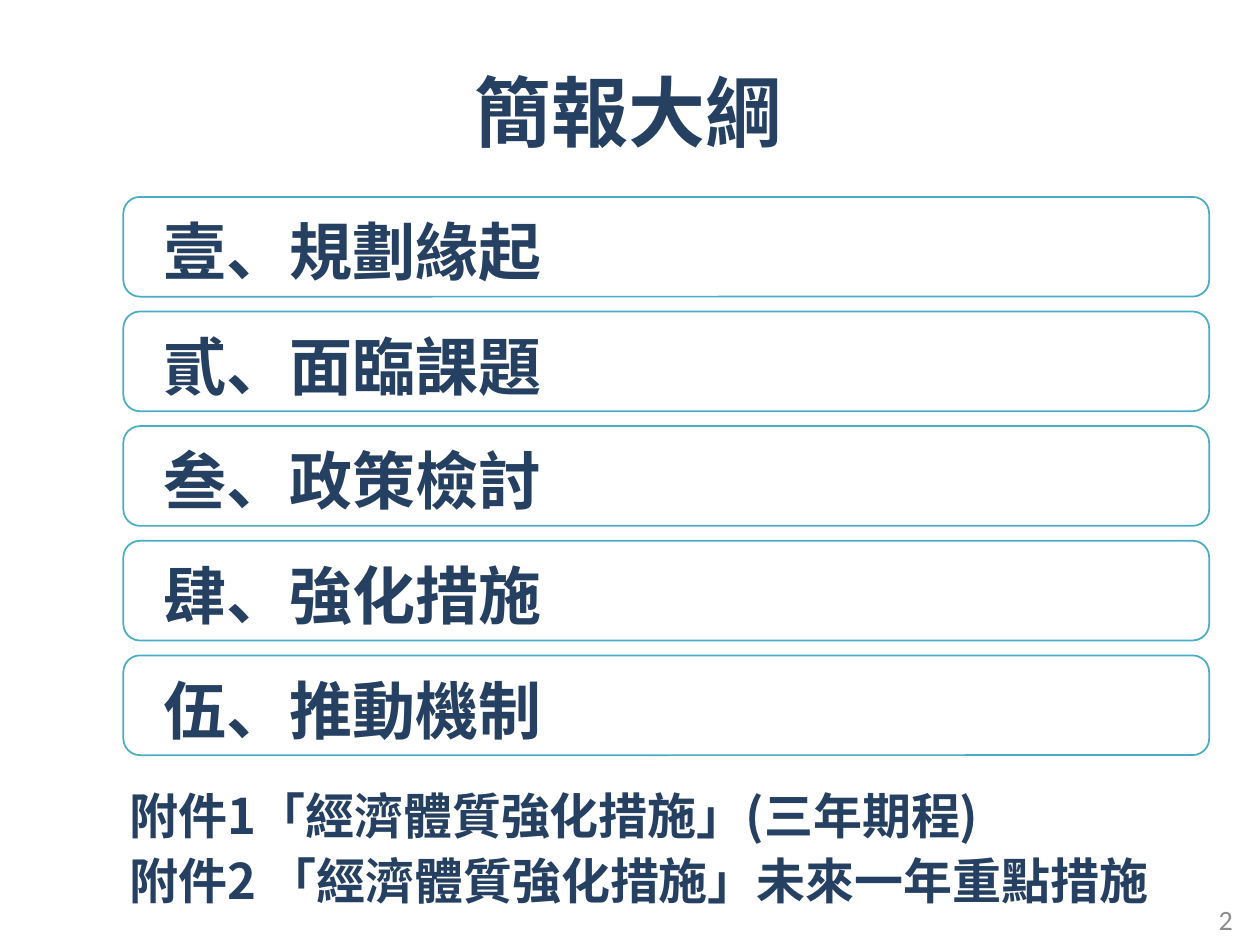
from lxml import etree
from pptx import Presentation
from pptx.dml.color import RGBColor
from pptx.enum import shapes, text
from pptx.oxml.ns import qn
from pptx.util import Pt

CJK_FONT = "Noto Sans CJK SC"
NAVY = "254061"


def color(hex_string):
    return RGBColor.from_string(hex_string)


def format_runs(paragraph, size):
    """Make the runs bold navy, with the font set for Latin and Chinese text."""
    for run in paragraph.runs:
        run.font.size = Pt(size)
        run.font.bold = True
        run.font.name = CJK_FONT
        run.font.color.rgb = color(NAVY)
        latin = run.font._element.find(qn("a:latin"))
        east_asian = etree.Element(qn("a:ea"), typeface=CJK_FONT)
        latin.addnext(east_asian)


presentation = Presentation()
presentation.slide_width, presentation.slide_height = Pt(720), Pt(540)
slide = presentation.slides.add_slide(presentation.slide_layouts[5])

# Title
title = slide.shapes.title
title.left, title.top, title.width, title.height = Pt(52), Pt(30), Pt(615), Pt(73.5)
title.text_frame.text = "簡報大綱"
title.text_frame.vertical_anchor = text.MSO_ANCHOR.MIDDLE
paragraph = title.text_frame.paragraphs[0]
paragraph.alignment = text.PP_ALIGN.CENTER
paragraph.line_spacing = 0.9
format_runs(paragraph, 44)

# Chapters
chapters = ["壹、規劃緣起", "貳、面臨課題", "叁、政策檢討", "肆、強化措施", "伍、推動機制"]
for index, chapter in enumerate(chapters):
    box = slide.shapes.add_shape(
        shapes.MSO_SHAPE.ROUNDED_RECTANGLE,
        Pt(70.5), Pt(112.5 + 65.5 * index), Pt(620.5), Pt(57))
    box.shadow.inherit = False
    box.fill.solid()
    box.fill.fore_color.rgb = color("FFFFFF")
    box.line.color.rgb = color("4BACC6")
    box.line.width = Pt(1)
    frame = box.text_frame
    frame.text = chapter
    frame.vertical_anchor = text.MSO_ANCHOR.MIDDLE
    frame.margin_left, frame.margin_right = Pt(20.2), Pt(0)
    paragraph = frame.paragraphs[0]
    paragraph.alignment = text.PP_ALIGN.LEFT
    paragraph.line_spacing = 1.1
    format_runs(paragraph, 36)

# Annexes
annexes = slide.shapes.add_textbox(Pt(67), Pt(442), Pt(610.5), Pt(79))
annexes.text_frame.word_wrap = True
annexes.text_frame.text = "附件1「經濟體質強化措施」(三年期程)\n附件2 「經濟體質強化措施」未來一年重點措施"
for paragraph in annexes.text_frame.paragraphs:
    paragraph.line_spacing = Pt(37)
    format_runs(paragraph, 28)

# Slide number
number = slide.shapes.add_textbox(Pt(543.5), Pt(511), Pt(168), Pt(29))
number.text_frame.word_wrap = True
number.text_frame.vertical_anchor = text.MSO_ANCHOR.MIDDLE
number.text_frame.text = "2"
paragraph = number.text_frame.paragraphs[0]
paragraph.alignment = text.PP_ALIGN.RIGHT
font = paragraph.runs[0].font
font.size = Pt(16)
font.name = "Calibri"
font.color.rgb = color("8C8C8C")

presentation.save("out.pptx")
